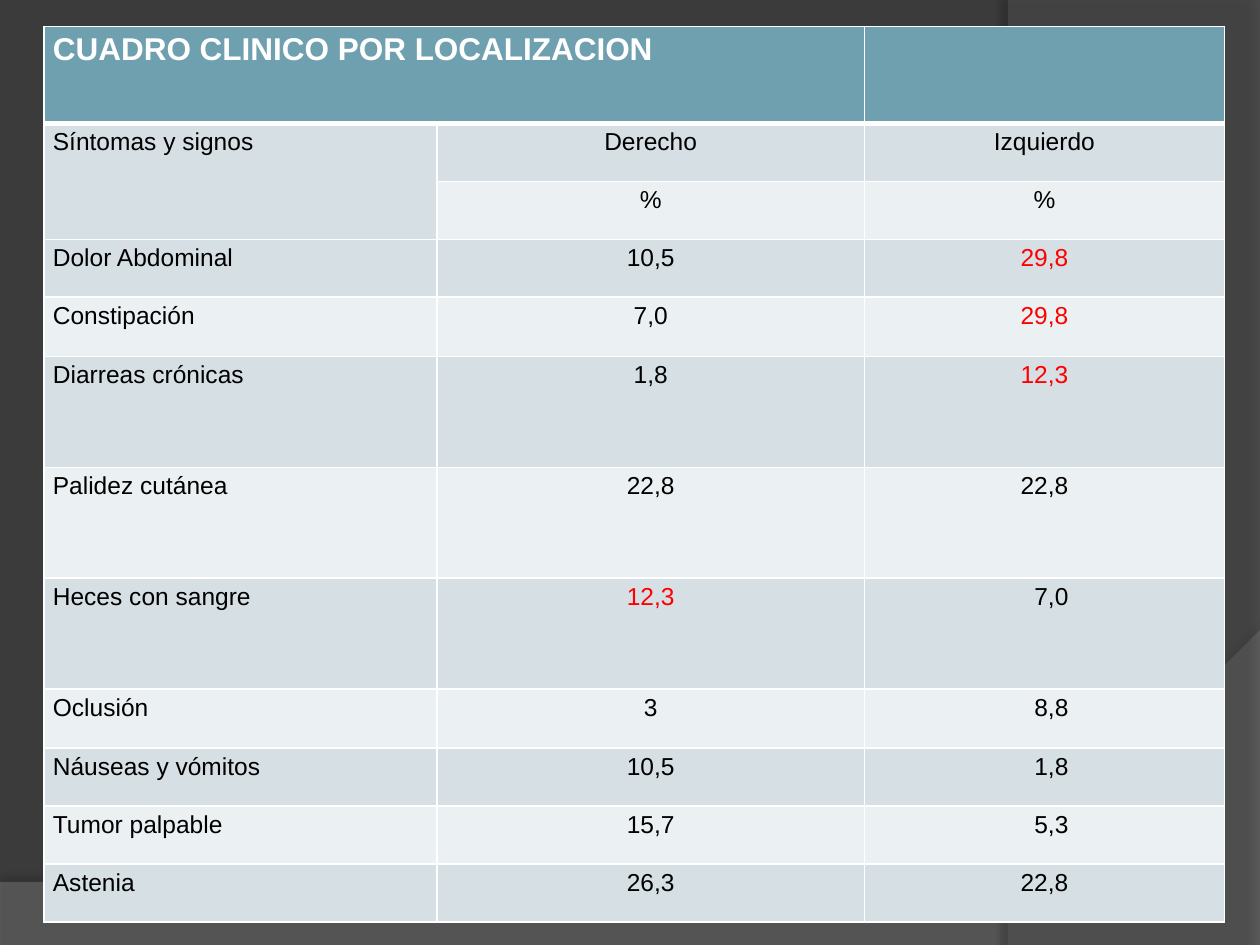
import pptx
import pptx.util
import pptx.oxml
import pptx.oxml.ns
import pptx.dml.color
import pptx.enum.text

RGB = pptx.dml.color.RGBColor
Inches = pptx.util.Inches
Pt = pptx.util.Pt
Align = pptx.enum.text.PP_ALIGN

DARK = RGB(0x3B, 0x3B, 0x3B)
GRAY = RGB(0x7F, 0x7F, 0x7F)
SLATE = RGB(0x5E, 0x5E, 0x5E)
TEAL = RGB(0x6E, 0xA0, 0xB0)
BANDS = RGB(0xD5, 0xDF, 0xE4), RGB(0xEB, 0xF0, 0xF2)
WHITE = RGB(0xFF, 0xFF, 0xFF)
BLACK = RGB(0, 0, 0)
RED = RGB(0xFF, 0, 0)

ROWS = [
    ("CUADRO CLINICO POR LOCALIZACION", "", ""),
    ("Síntomas y signos", "Derecho", "Izquierdo"),
    ("", "%", "%"),
    ("Dolor Abdominal", "10,5", "29,8"),
    ("Constipación", "7,0", "29,8"),
    ("Diarreas crónicas", "1,8", "12,3"),
    ("Palidez cutánea", "22,8", "22,8"),
    ("Heces con sangre", "12,3", "7,0"),
    ("Oclusión", "3", "8,8"),
    ("Náuseas y vómitos", "10,5", "1,8"),
    ("Tumor palpable", "15,7", "5,3"),
    ("Astenia", "26,3", "22,8"),
]
REDS = {(3, 2), (4, 2), (5, 2), (7, 1)}
WIDTHS = [3.12, 3.39, 2.86]
HEIGHTS = [0.77] + [0.46] * 3 + [0.47] + [0.88] * 3 + [0.47] + [0.46] * 3
LEFT, TOP = 0.35, 0.21
PAD, INSET, SHIFT = 0.07, 0.04, 0.11

FLOOR = {
    "parts": [[(0, 7.05)], [(0, 7.51)], [(10, 7.51)], [(10, 5.2)],
              [(5.59, 7.29), (3.91, 7.19), (0, 7.05)]],
    "color": GRAY, "alpha": 45, "shade": (35, 4, 3.5, 270),
}
SIDE = {
    "parts": [[(10, 0.02)], [(10, 7.5)], [(8.21, 7.5)],
              [(9.35, 6.19), (10.18, 3), (8, 0)], [(10, 0.02)]],
    "color": SLATE, "alpha": 40, "shade": (45, 4, 4, 180),
}
STEPS = 32


def trace(parts):
    points = []
    for part in parts:
        if len(part) == 1:
            points += part
            continue
        nodes = [points[-1]] + part
        for step in range(1, STEPS + 1):
            t = step / STEPS
            mix = [(1 - t) ** 3, 3 * t * (1 - t) ** 2, 3 * t * t * (1 - t), t ** 3]
            points.append(tuple(sum(m * n[axis] for m, n in zip(mix, nodes))
                                for axis in (0, 1)))
    return points


def add_wave(slide, wave):
    first, *rest = trace(wave["parts"])
    pen = slide.shapes.build_freeform(*first, scale=Inches(1))
    pen.add_line_segments(rest, close=True)
    shape = pen.convert_to_shape()
    shape.fill.solid()
    shape.fill.fore_color.rgb = wave["color"]
    shape.line.fill.background()
    tint = shape.fill._xPr.find(".//" + pptx.oxml.ns.qn("a:srgbClr"))
    tint.append(pptx.oxml.parse_xml(
        f'<a:alpha {pptx.oxml.ns.nsdecls("a")} val="{wave["alpha"] * 1000}"/>'))
    alpha, blur, gap, angle = wave["shade"]
    shape.shadow.inherit = False
    glow = shape._element.spPr.find(pptx.oxml.ns.qn("a:effectLst"))
    glow.append(pptx.oxml.parse_xml(
        f'<a:outerShdw {pptx.oxml.ns.nsdecls("a")} blurRad="{Pt(blur)}" '
        f'dist="{Pt(gap)}" dir="{angle * 60000}" rotWithShape="0">'
        f'<a:srgbClr val="{BLACK}"><a:alpha val="{alpha * 1000}"/></a:srgbClr>'
        '</a:outerShdw>'))


def add_edges(cell, row):
    thick = {(0, "B"), (1, "T")}
    for side in "LRTB":
        width = 3 if (row, side) in thick else 1
        cell._tc.get_or_add_tcPr().append(pptx.oxml.parse_xml(
            f'<a:ln{side} {pptx.oxml.ns.nsdecls("a")} w="{Pt(width)}">'
            f'<a:solidFill><a:srgbClr val="{WHITE}"/></a:solidFill></a:ln{side}>'))


def fill_cell(cell, row, col, text):
    add_edges(cell, row)
    cell.fill.solid()
    band = 0 if (row, col) == (2, 0) else (row - 1) % 2
    cell.fill.fore_color.rgb = BANDS[band] if row else TEAL
    nudge = SHIFT if col == 2 and 7 <= row <= 10 else 0
    cell.margin_left = Inches(PAD + nudge)
    cell.margin_right = Inches(PAD)
    cell.margin_top = cell.margin_bottom = Inches(INSET)
    line = cell.text_frame.paragraphs[0]
    line.text = text
    line.alignment = Align.CENTER if col else Align.LEFT
    line.font.name = "Arial"
    line.font.size = Pt(14 if row else 18)
    line.font.bold = row == 0
    line.font.color.rgb = RED if (row, col) in REDS else BLACK if row else WHITE


def add_grid(slide):
    table = slide.shapes.add_table(
        len(ROWS), len(WIDTHS), Inches(LEFT), Inches(TOP),
        Inches(sum(WIDTHS)), Inches(sum(HEIGHTS))).table
    for column, width in zip(table.columns, WIDTHS):
        column.width = Inches(width)
    for line, height in zip(table.rows, HEIGHTS):
        line.height = Inches(height)
    for row, texts in enumerate(ROWS):
        for col, text in enumerate(texts):
            fill_cell(table.cell(row, col), row, col, text)
    table.cell(0, 0).merge(table.cell(0, 1))
    table.cell(1, 0).merge(table.cell(2, 0))


def main():
    deck = pptx.Presentation()
    deck.slide_width, deck.slide_height = Inches(10), Inches(7.5)
    slide = deck.slides.add_slide(deck.slide_layouts[6])
    slide.background.fill.solid()
    slide.background.fill.fore_color.rgb = DARK
    for wave in (FLOOR, SIDE):
        add_wave(slide, wave)
    add_grid(slide)
    deck.save("out.pptx")


if __name__ == "__main__":
    main()
